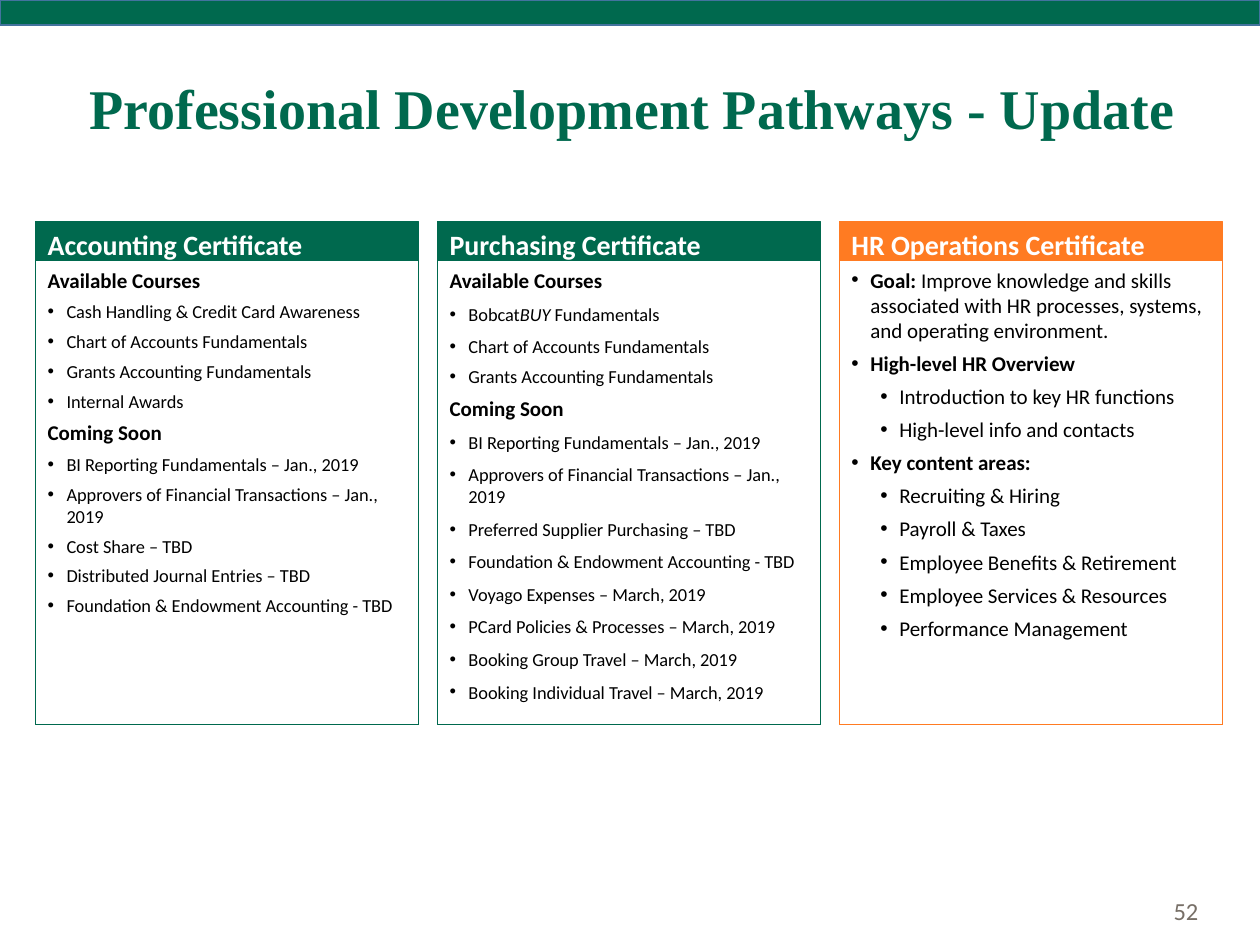
from dataclasses import dataclass

from lxml.etree import SubElement
from pptx import Presentation
from pptx.dml.color import RGBColor
from pptx.enum.shapes import MSO_SHAPE as SHAPE
from pptx.enum.text import MSO_ANCHOR as ANCHOR, PP_ALIGN as ALIGN
from pptx.oxml.ns import qn
from pptx.util import Inches, Pt

GREEN = RGBColor(0x00, 0x69, 0x4E)
ORANGE = RGBColor(0xFF, 0x7B, 0x22)
BLUE = RGBColor(0x43, 0x73, 0x9E)
GREY = RGBColor(0x77, 0x6F, 0x67)
WHITE = RGBColor(0xFF, 0xFF, 0xFF)
BLACK = RGBColor(0x00, 0x00, 0x00)

WIDTH, HEIGHT = Inches(10), Inches(7.5)
LEFT, TOP = Inches(0.28), Inches(1.76)
PANEL_W, PANEL_H = Inches(3.04), Inches(3.99)
PITCH = Inches(3.19)
HEADER_H = Inches(0.31)
HANG = Inches(0.15)
INDENTS = {1: HANG, 2: Inches(0.38)}


@dataclass
class Item:
    """One paragraph: runs of (text, style), where style may hold b or i."""
    runs: list
    level: int = 1
    size: float = 10.5
    after: float = 4.5


def heading(text, after=4.5):
    """Return a bold line without a bullet."""
    return Item([(text, "b")], 0, 12, after)


def bullets(texts, level=1, size=10.5, after=4.5):
    """Return one plain bullet for each text."""
    return [Item([(text, "")], level, size, after) for text in texts]


ACCOUNTING = [
    heading("Available Courses"),
    *bullets(["Cash Handling & Credit Card Awareness", "Chart of Accounts Fundamentals",
              "Grants Accounting Fundamentals", "Internal Awards"]),
    heading("Coming Soon"),
    *bullets(["BI Reporting Fundamentals – Jan., 2019",
              "Approvers of Financial Transactions – Jan., 2019", "Cost Share – TBD",
              "Distributed Journal Entries – TBD", "Foundation & Endowment Accounting - TBD"]),
]
PURCHASING = [
    heading("Available Courses", 6),
    Item([("Bobcat", ""), ("BUY", "i"), (" Fundamentals", "")], after=6),
    *bullets(["Chart of Accounts Fundamentals", "Grants Accounting Fundamentals"]),
    heading("Coming Soon", 6),
    *bullets(["BI Reporting Fundamentals – Jan., 2019",
              "Approvers of Financial Transactions – Jan., 2019",
              "Preferred Supplier Purchasing – TBD", "Foundation & Endowment Accounting - TBD",
              "Voyago Expenses – March, 2019", "PCard Policies & Processes – March, 2019",
              "Booking Group Travel – March, 2019", "Booking Individual Travel – March, 2019"],
             after=6),
]
HR_OPERATIONS = [
    Item([("Goal: ", "b"), ("Improve knowledge and skills associated with HR processes, "
                            "systems, and operating environment.", "")], size=12),
    Item([("High-level HR Overview", "b")], size=12),
    *bullets(["Introduction to key HR functions", "High-level info and contacts"], 2, 12),
    Item([("Key content areas:", "b")], size=12),
    *bullets(["Recruiting & Hiring", "Payroll & Taxes", "Employee Benefits & Retirement",
              "Employee Services & Resources", "Performance Management"], 2, 12),
]
PANELS = [
    ("Accounting Certificate", GREEN, ACCOUNTING),
    ("Purchasing Certificate", GREEN, PURCHASING),
    ("HR Operations Certificate", ORANGE, HR_OPERATIONS),
]


def style_font(font, size, color, bold=False, name="Calibri"):
    """Set the face, size, weight and colour of a font."""
    font.name, font.size, font.bold = name, Pt(size), bold
    font.color.rgb = color


def add_box(shapes, box, fill, line, weight):
    """Add a flat rectangle whose text starts at its top left."""
    s = shapes.add_shape(SHAPE.RECTANGLE, *box)
    s.shadow.inherit = False
    s.fill.solid()
    s.fill.fore_color.rgb = fill
    s.line.color.rgb = line
    s.line.width = Pt(weight)
    s.text_frame.word_wrap = True
    s.text_frame.vertical_anchor = ANCHOR.TOP
    return s


def set_bullet(p, level):
    """Give a paragraph a hanging round bullet."""
    pPr = p._p.get_or_add_pPr()
    pPr.set("marL", str(INDENTS[level]))
    pPr.set("indent", str(-HANG))
    SubElement(pPr, qn("a:buFont")).set("typeface", "Arial")
    SubElement(pPr, qn("a:buChar")).set("char", "•")


def fill_list(tf, items):
    """Write the items into a text frame, one paragraph each."""
    for n, item in enumerate(items):
        p = tf.add_paragraph() if n else tf.paragraphs[0]
        p.alignment = ALIGN.LEFT
        p.space_after = Pt(item.after)
        if item.level:
            set_bullet(p, item.level)
        for text, style in item.runs:
            r = p.add_run()
            r.text = text
            style_font(r.font, item.size, BLACK, "b" in style)
            r.font.italic = "i" in style


def add_panel(slide, box, title, color, items):
    """Add a grouped certificate panel: coloured header over a white list."""
    x, y, w, h = box
    group = slide.shapes.add_group_shape()
    header = add_box(group.shapes, box, color, color, 0.5)
    p = header.text_frame.paragraphs[0]
    p.text = title
    p.alignment = ALIGN.LEFT
    p.space_after = Pt(6)
    style_font(p.runs[0].font, 16, WHITE, True)
    body = add_box(group.shapes, (x, y + HEADER_H, w, h - HEADER_H), WHITE, color, 0.5)
    fill_list(body.text_frame, items)


def add_title(slide, box, text):
    """Place and format the title placeholder."""
    s = slide.shapes.title
    s.left, s.top, s.width, s.height = box
    tf = s.text_frame
    tf.text = text
    tf.vertical_anchor = ANCHOR.MIDDLE
    p = tf.paragraphs[0]
    p.alignment = ALIGN.CENTER
    p.line_spacing = 0.9
    style_font(p.runs[0].font, 32, GREEN, True, "Times New Roman")


def add_page_number(slide, box, text):
    """Add the right-aligned page number."""
    tf = slide.shapes.add_textbox(*box).text_frame
    tf.word_wrap = True
    tf.vertical_anchor = ANCHOR.MIDDLE
    p = tf.paragraphs[0]
    p.text = text
    p.alignment = ALIGN.RIGHT
    style_font(p.runs[0].font, 14, GREY)


def main():
    """Build the slide and save it."""
    prs = Presentation()
    prs.slide_width, prs.slide_height = WIDTH, HEIGHT
    slide = prs.slides.add_slide(prs.slide_layouts[5])
    add_page_number(slide, (Inches(6.61), Inches(7.03), Inches(3), Inches(0.4)), "52")
    add_box(slide.shapes, (0, 0, WIDTH, Inches(0.2)), GREEN, BLUE, 1)
    add_title(slide, (Inches(0.61), Inches(0.16), Inches(8.82), Inches(1.45)),
              "Professional Development Pathways - Update")
    for n, panel in enumerate(PANELS):
        add_panel(slide, (LEFT + n * PITCH, TOP, PANEL_W, PANEL_H), *panel)
    prs.save("out.pptx")


if __name__ == "__main__":
    main()
